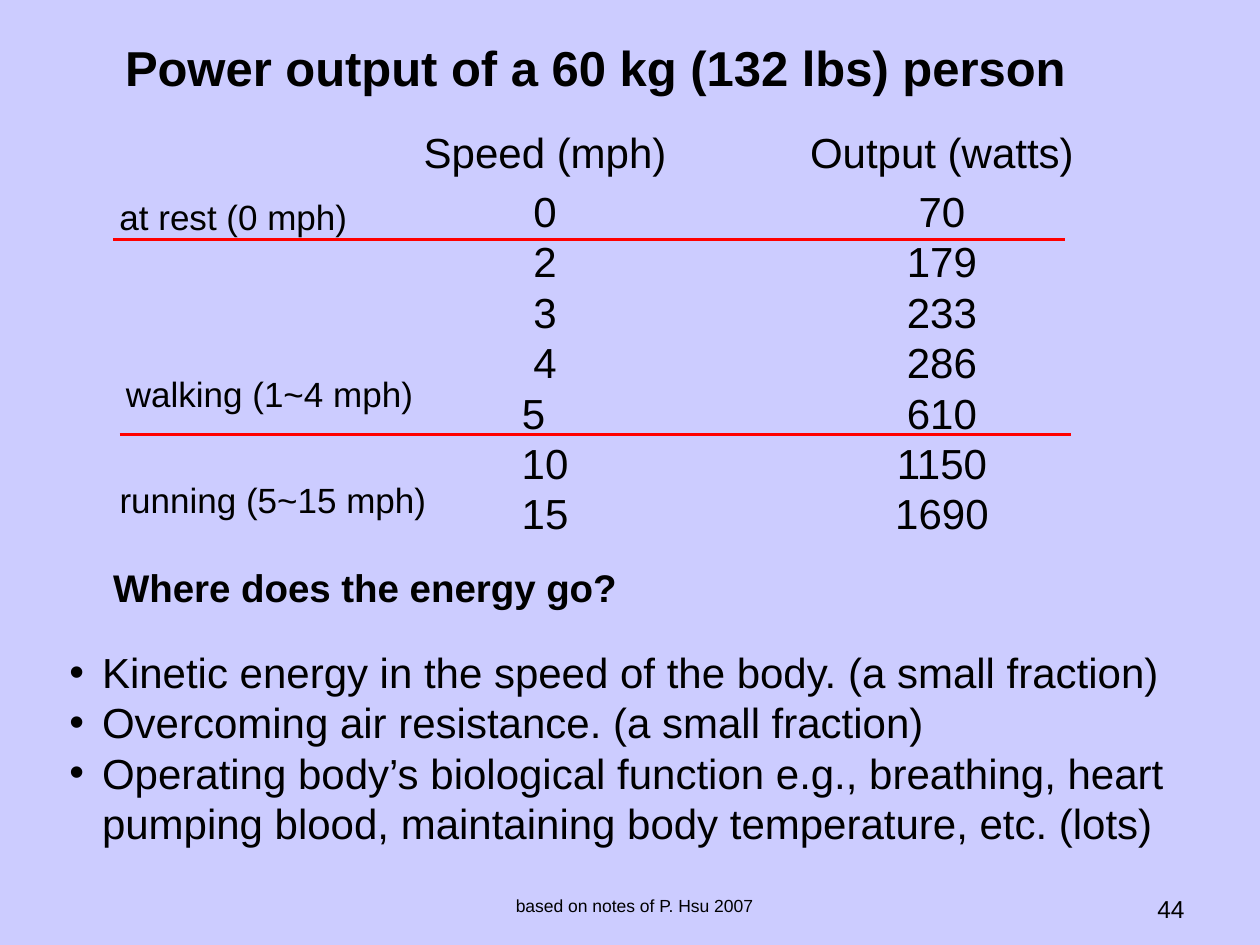
"""Builds a slide on the power output of a person at rest, walking and running."""
from lxml import etree
from pptx import Presentation
from pptx.dml.color import RGBColor
from pptx.enum.shapes import MSO_CONNECTOR
from pptx.enum.text import MSO_ANCHOR, MSO_AUTO_SIZE, PP_ALIGN
from pptx.oxml.ns import qn
from pptx.util import Pt

LEFT, CENTER, RIGHT = PP_ALIGN.LEFT, PP_ALIGN.CENTER, PP_ALIGN.RIGHT
TOP, MIDDLE = MSO_ANCHOR.TOP, MSO_ANCHOR.MIDDLE
NO_AUTOFIT = MSO_AUTO_SIZE.NONE
STRAIGHT = MSO_CONNECTOR.STRAIGHT
BACKGROUND = RGBColor(0xCC, 0xCC, 0xFF)
BLACK = RGBColor(0, 0, 0)
RED = RGBColor(0xFF, 0, 0)
FONT = "Arial"
PLAIN_TABLE_STYLE = "{2D5ABB26-0587-4C30-8999-92F81FD0307C}"

TITLE = "Power output of a 60 kg (132 lbs) person"
TITLE_BOX = (43.2, 18, 594, 50)
REASONS = [
    "Kinetic energy in the speed of the body. (a small fraction)",
    "Overcoming air resistance. (a small fraction)",
    "Operating body’s biological function e.g., breathing, heart pumping blood, "
    "maintaining body temperature, etc. (lots)",
]
REASONS_BOX = (32.4, 365.8, 666, 123.8)
HANGING_INDENT = 18.7

POWER_ROWS = [
    ("Speed (mph)", "Output (watts)"),
    ("0", "70"),
    ("2", "179"),
    ("3", "233"),
    ("4", "286"),
    ("5", "610"),
    ("10", "1150"),
    ("15", "1690"),
]
TABLE_LEFT, TABLE_TOP = 198, 68.4
COLUMN_WIDTHS = (220.3, 233.3)
HEADER_HEIGHT, ROW_HEIGHT = 38.9, 28.8
CELL_INSET = 6.67
SHIFTED_CELL, SHIFTED_INSET = "5", 13.34

NOTES = [
    ("at rest (0 mph)", (61.2, 108, 151.2, 31.7), {"size": 20}),
    ("walking (1~4 mph)", (64.8, 209.5, 185.8, 31.7), {"size": 20}),
    ("running (5~15 mph)", (61.2, 270, 190.8, 31.7), {"size": 20}),
    ("Where does the energy go?", (57.6, 319, 306.7, 33.8), {"size": 22, "bold": True}),
    ("based on notes of P. Hsu 2007", (248.4, 507.6, 228.2, 23), {"size": 10, "align": CENTER}),
    ("44", (516.2, 507.6, 167.8, 21.6), {"size": 14, "align": RIGHT}),
]
DIVIDERS = [(64.8, 136.8), (68.4, 248.4)]
DIVIDER_LENGTH = 543.6


def write(frame, lines, size=24, bold=False, align=LEFT, anchor=TOP, wrap=True):
    frame.word_wrap = wrap
    frame.vertical_anchor = anchor
    frame.text = "\n".join(lines)
    for paragraph in frame.paragraphs:
        paragraph.alignment = align
        paragraph.space_before = Pt(0)
        font = paragraph.font
        font.name, font.size, font.bold = FONT, Pt(size), bold
        font.color.rgb = BLACK


def place(shape, box):
    shape.left, shape.top, shape.width, shape.height = map(Pt, box)


def add_bullets(frame):
    for paragraph in frame.paragraphs:
        properties = paragraph._p.get_or_add_pPr()
        properties.set("marL", str(Pt(HANGING_INDENT)))
        properties.set("indent", str(-Pt(HANGING_INDENT)))
        bullet = etree.Element(qn("a:buChar"), char="•")
        properties.find(qn("a:spcBef")).addnext(bullet)


def add_power_table(slide):
    heights = [HEADER_HEIGHT] + [ROW_HEIGHT] * (len(POWER_ROWS) - 1)
    table = slide.shapes.add_table(
        len(POWER_ROWS), len(COLUMN_WIDTHS), Pt(TABLE_LEFT), Pt(TABLE_TOP),
        Pt(sum(COLUMN_WIDTHS)), Pt(sum(heights))).table
    table.first_row = table.horz_banding = False
    table._tbl.tblPr.find(qn("a:tableStyleId")).text = PLAIN_TABLE_STYLE
    for column, width in zip(table.columns, COLUMN_WIDTHS):
        column.width = Pt(width)
    for row, height, values in zip(table.rows, heights, POWER_ROWS):
        row.height = Pt(height)
        for cell, value in zip(row.cells, values):
            cell.fill.background()
            cell.margin_top = cell.margin_bottom = 0
            cell.margin_left = Pt(CELL_INSET)
            cell.margin_right = Pt(SHIFTED_INSET if value == SHIFTED_CELL else 0)
            cell.vertical_anchor = MIDDLE
            write(cell.text_frame, [value], align=CENTER, anchor=None, wrap=None)


def add_divider(slide, left, top):
    line = slide.shapes.add_connector(
        STRAIGHT, Pt(left), Pt(top), Pt(left + DIVIDER_LENGTH), Pt(top))
    line.line.color.rgb = RED
    line.line.width = Pt(2)
    etree.SubElement(line._element.spPr, qn("a:effectLst"))


def main():
    presentation = Presentation()
    presentation.slide_width, presentation.slide_height = Pt(720), Pt(540)
    slide = presentation.slides.add_slide(presentation.slide_layouts[1])
    slide.background.fill.solid()
    slide.background.fill.fore_color.rgb = BACKGROUND

    title, body = slide.shapes.title, slide.placeholders[1]
    place(title, TITLE_BOX)
    place(body, REASONS_BOX)
    write(title.text_frame, [TITLE], size=28, bold=True, align=CENTER)
    write(body.text_frame, REASONS)
    add_bullets(body.text_frame)
    for placeholder in (title, body):
        placeholder.text_frame.auto_size = NO_AUTOFIT

    add_power_table(slide)
    for text, box, style in NOTES:
        note = slide.shapes.add_textbox(*map(Pt, box))
        write(note.text_frame, [text], wrap="align" in style, **style)
    for left, top in DIVIDERS:
        add_divider(slide, left, top)
    presentation.save("out.pptx")


if __name__ == "__main__":
    main()
